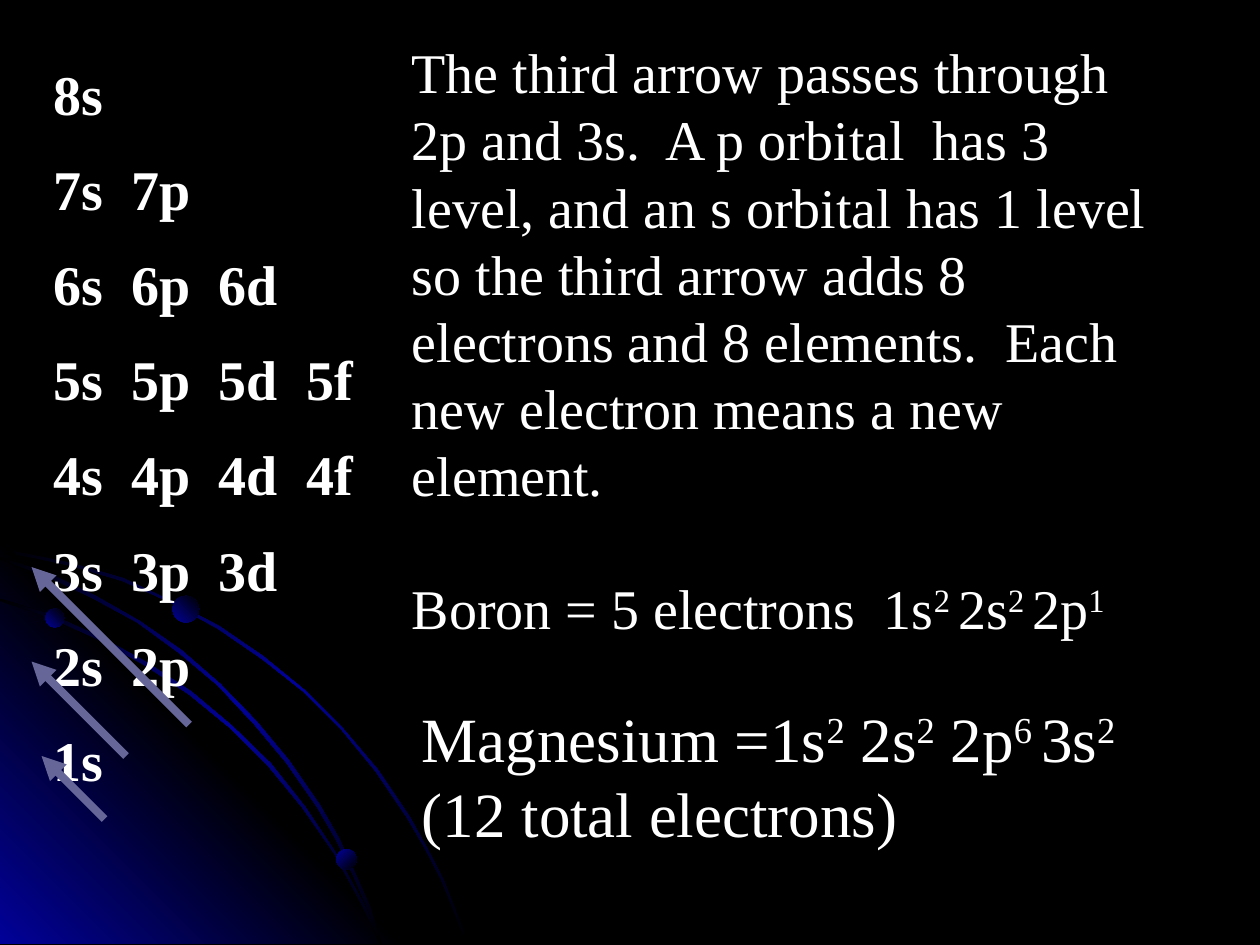
"""Build a slide on electron orbitals and the third diagonal arrow."""
from pptx import Presentation
from pptx import util as u
from pptx.dml.color import RGBColor
from pptx.enum import shapes, text
from pptx.oxml import parse_xml
from pptx.oxml.ns import nsdecls, qn

BLACK, BLUE, WHITE, ARROW = "000000", "010199", "FFFFFF", "666699"


def fill_gradient(shape, colors, angle):
    shape.shadow.inherit = False
    shape.line.fill.background()
    shape.fill.gradient()
    stops = "".join(
        f'<a:gs pos="{100000 * i // (len(colors) - 1)}"><a:srgbClr val="{color}"/></a:gs>'
        for i, color in enumerate(colors)
    )
    gradient = parse_xml(
        f'<a:gradFill {nsdecls("a")} rotWithShape="1"><a:gsLst>{stops}</a:gsLst>'
        f'<a:lin ang="{angle * 60000}" scaled="1"/></a:gradFill>'
    )
    properties = shape._element.spPr
    properties.replace(properties.find(qn("a:gradFill")), gradient)


def add_text(slide, box, lines, size, bold=False):
    frame = slide.shapes.add_textbox(*map(u.Inches, box)).text_frame
    frame.word_wrap = True
    frame.auto_size = text.MSO_AUTO_SIZE.SHAPE_TO_FIT_TEXT
    font_format = {"name": "Times New Roman", "size": u.Pt(size), "bold": bold}
    for i, line in enumerate(lines):
        paragraph = frame.add_paragraph() if i else frame.paragraphs[0]
        paragraph.space_before = u.Pt(size / 2 if i else 0)
        for j, part in enumerate(line.split("^")):
            run = paragraph.add_run()
            run.text = part
            for key, value in font_format.items():
                setattr(run.font, key, value)
            run.font.color.rgb = RGBColor.from_string(WHITE)
            if j % 2:
                run._r.get_or_add_rPr().set("baseline", "30000")


presentation = Presentation()
presentation.slide_width = u.Inches(10)
presentation.slide_height = u.Inches(7.5)
slide = presentation.slides.add_slide(presentation.slide_layouts[6])
slide.background.fill.solid()
slide.background.fill.fore_color.rgb = RGBColor.from_string(BLACK)

outer_orbit = [
    (0.57, 4.47), (0.28, 4.41), (0, 4.35), (0, 4.38), (0.28, 4.43), (0.56, 4.49),
    (0.97, 4.61), (1.35, 4.78), (1.73, 4.99), (2.08, 5.23), (2.41, 5.49), (2.71, 5.79),
    (2.98, 6.12), (3.23, 6.49), (3.37, 6.73), (3.5, 6.98), (3.6, 7.23), (3.7, 7.49),
    (3.72, 7.49), (3.62, 7.23), (3.52, 6.98), (3.39, 6.73), (3.25, 6.48), (3, 6.11),
    (2.72, 5.78), (2.42, 5.48), (2.09, 5.21), (1.74, 4.97), (1.36, 4.77), (0.98, 4.59),
]
corner = [(3.22, 7.49), (0, 7.49), (0, 4.27)]
inner_orbit = [
    (2.85, 7.14), (2.94, 7.32), (3.01, 7.49), (3.03, 7.49), (2.96, 7.3), (2.86, 7.12),
    (2.66, 6.76), (2.42, 6.4), (2.15, 6.06), (1.84, 5.76), (1.52, 5.49), (1.17, 5.26),
    (0.79, 5.05), (0.41, 4.88), (0, 4.75), (0, 4.77), (0.39, 4.9), (0.77, 5.07),
    (1.15, 5.28), (1.5, 5.51), (1.83, 5.78), (2.13, 6.08), (2.4, 6.41), (2.65, 6.77),
]
middle_orbit = [
    (0, 4.42), (0, 4.44), (0.36, 4.57), (0.74, 4.75), (1.09, 4.94), (1.42, 5.18),
    (1.73, 5.44), (2.02, 5.75), (2.27, 6.05), (2.52, 6.41), (2.67, 6.67), (2.8, 6.94),
    (2.92, 7.22), (3.01, 7.49), (3.03, 7.49), (2.94, 7.2), (2.82, 6.93), (2.69, 6.65),
    (2.54, 6.39), (2.29, 6.03), (2.04, 5.73), (1.75, 5.43), (1.44, 5.16), (1.11, 4.93),
    (0.76, 4.73), (0.39, 4.55),
]
orbit_colors = [BLACK, BLUE, BLACK]
for outline, colors, angle in [
    (outer_orbit, orbit_colors, 45),
    (corner, [BLUE, BLACK, BLUE], 315),
    (inner_orbit, orbit_colors, 45),
    (middle_orbit, orbit_colors, 45),
]:
    points = [(u.Inches(x), u.Inches(y)) for x, y in outline]
    builder = slide.shapes.build_freeform(*points[0])
    builder.add_line_segments(points[1:], close=True)
    fill_gradient(builder.convert_to_shape(), colors, angle)

for left, top, size, angle in [
    (0.36, 4.83, 0.15, 315), (2.67, 6.74, 0.16, 45), (1.37, 4.73, 0.21, 315),
]:
    electron = slide.shapes.add_shape(
        shapes.MSO_SHAPE.OVAL, *map(u.Inches, (left, top, size, size))
    )
    fill_gradient(electron, [BLUE, BLACK], angle)

orbitals = ["8s", "7s  7p", "6s  6p  6d", "5s  5p  5d  5f",
            "4s  4p  4d  4f", "3s  3p  3d", "2s  2p", "1s"]
add_text(slide, (0.33, 0.42, 2.67, 6.84), orbitals, 32, bold=True)
magnesium = "Magnesium =1s^2^ 2s^2^ 2p^6 ^3s^2 ^(12 total electrons)"
add_text(slide, (3.25, 5.5, 5.92, 1.3), [magnesium], 36)

for ends in [(0.83, 6.5, 0.33, 6), (1, 6, 0.25, 5.25), (1.5, 5.75, 0.25, 4.5)]:
    arrow = slide.shapes.add_connector(
        shapes.MSO_CONNECTOR.STRAIGHT, *map(u.Inches, ends)
    )
    arrow.line.width = u.Pt(4.5)
    arrow.line.color.rgb = RGBColor.from_string(ARROW)
    arrow.line._get_or_add_ln().append(
        parse_xml(f'<a:tailEnd {nsdecls("a")} type="triangle"/>')
    )
    arrow._element.spPr.append(parse_xml(f'<a:effectLst {nsdecls("a")}/>'))

explanation = (
    "The third arrow passes through 2p and 3s.  A p orbital  has 3 level, "
    "and an s orbital has 1 level so the third arrow adds 8 electrons and "
    "8 elements.  Each new electron means a new element."
)
add_text(slide, (3.17, 0.25, 6.25, 3.83), [explanation], 32)
boron = "Boron = 5 electrons  1s^2 ^2s^2 ^2p^1"
add_text(slide, (3.17, 4.5, 6.83, 0.63), [boron], 32)

presentation.save("out.pptx")
